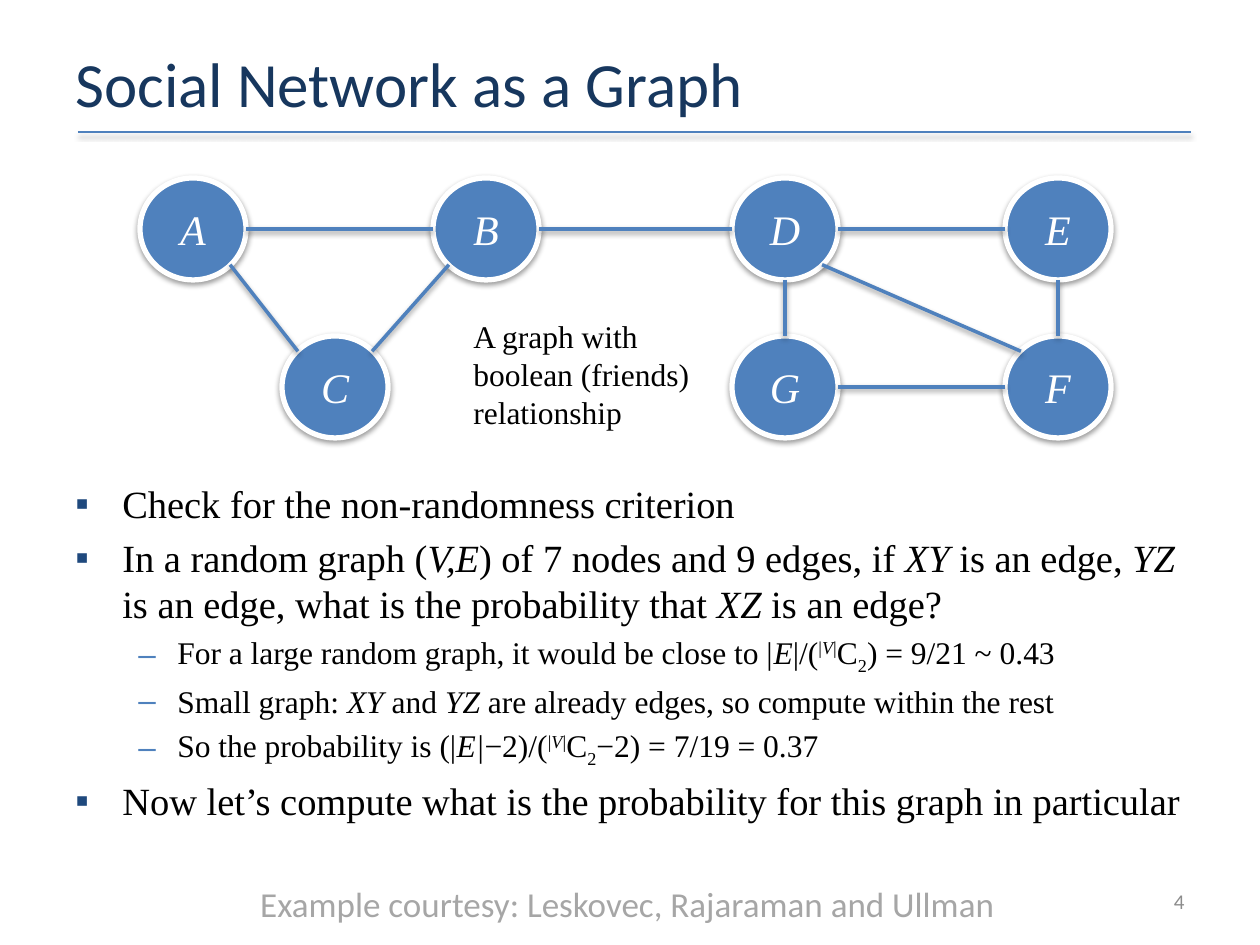
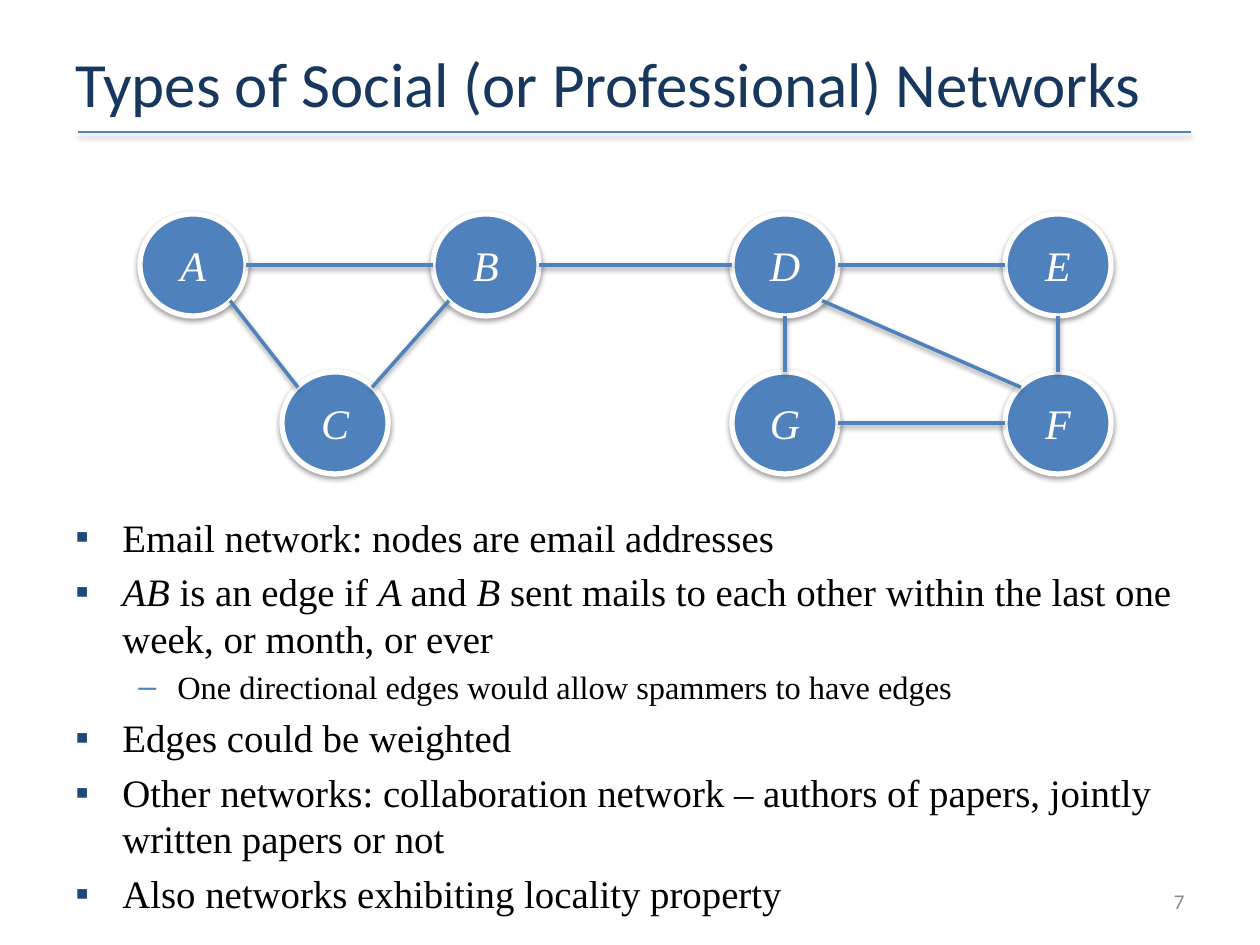
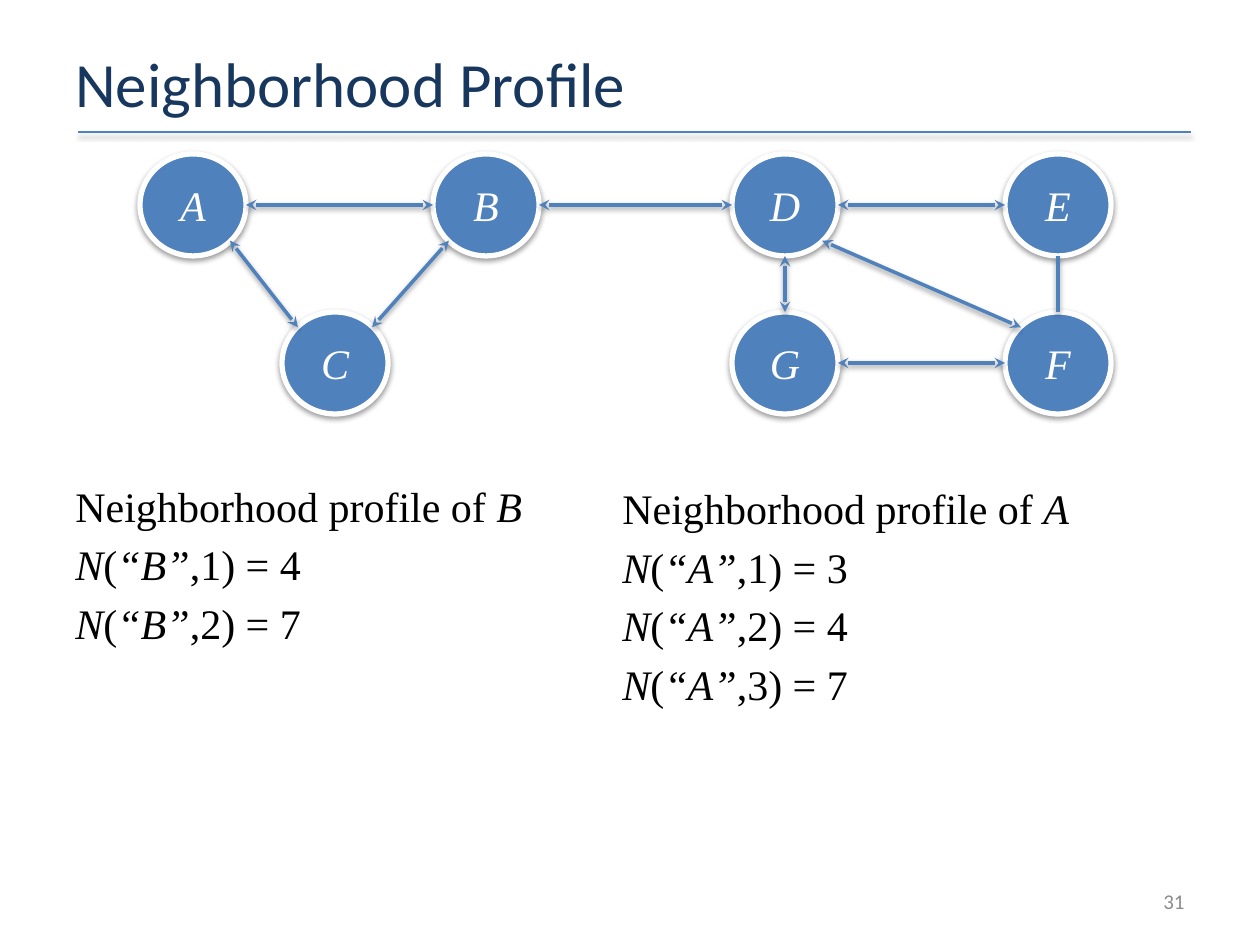
from lxml import etree
from pptx import Presentation
from pptx.dml.color import RGBColor
from pptx.enum.shapes import MSO_CONNECTOR, MSO_SHAPE
from pptx.enum.text import MSO_ANCHOR, PP_ALIGN
from pptx.oxml.ns import qn
from pptx.util import Pt

LINE, OVAL = MSO_CONNECTOR.STRAIGHT, MSO_SHAPE.OVAL
TOP, MID = MSO_ANCHOR.TOP, MSO_ANCHOR.MIDDLE
LEFT, MIDST, RIGHT = PP_ALIGN.LEFT, PP_ALIGN.CENTER, PP_ALIGN.RIGHT
SCALE = 914400 / 126
SERIF, SANS = "Times New Roman", "Calibri"
BLUE, NAVY, DEEP = "4F81BD", "17375E", "1F497D"
WHITE, BLACK, GREY, PALE = "FFFFFF", "000000", "8C8C8C", "A6A6A6"

BULLETS = [(47, 47, "▪", DEEP), (102, 39, "–", BLUE)]
WIDE, HIGH, DROP = 106, 102, 158
NODES = {
    "A": (140, 0), "B": (433, 0), "C": (282, 1), "D": (732, 0),
    "E": (1005, 0), "G": (732, 1), "F": (1005, 1),
}
NEAR, FAR = 0.15, 0.85
SITES = {
    "top": (0.5, 0), "base": (0.5, 1), "left": (0, 0.5), "right": (1, 0.5),
    "nw": (NEAR, NEAR), "ne": (FAR, NEAR), "sw": (NEAR, FAR), "se": (FAR, FAR),
}
EDGES = [
    ("A", "right", "B", "left"), ("A", "se", "C", "nw"),
    ("B", "sw", "C", "ne"), ("D", "left", "B", "right"),
    ("D", "base", "G", "top"), ("D", "right", "E", "left"),
    ("G", "right", "F", "left"), ("D", "se", "F", "nw"),
    ("E", "base", "F", "top"),
]
PLAIN = ("E", "F")


def px(num):
    return round(num * SCALE)


def hue(code):
    return RGBColor.from_string(code)


def add(root, tag, **attrs):
    return etree.SubElement(root, qn(tag), {k: str(v) for k, v in attrs.items()})


def shade(item):
    effect = add(item._element.spPr, "a:effectLst")
    drop = add(effect, "a:outerShdw", blurRad=40000, dist=20000,
               dir=5400000, rotWithShape=0)
    tint = add(drop, "a:srgbClr", val=BLACK)
    add(tint, "a:alpha", val=38000)


def split(line):
    parts, marks = [], {"*": False, "^": False, "_": False}
    chunk = ""
    for char in line + "*":
        if char in marks:
            if chunk:
                parts.append((chunk, dict(marks)))
            chunk = ""
            marks[char] = not marks[char]
        else:
            chunk += char
    return parts


def bullet(para, level):
    left, hang, sign, color = BULLETS[level]
    props = para._p.get_or_add_pPr()
    props.set("marL", str(px(left)))
    props.set("indent", str(-px(hang)))
    add(add(props, "a:buClr"), "a:srgbClr", val=color)
    add(props, "a:buFont", typeface="Arial")
    add(props, "a:buChar", char=sign)


def write(frame, lines, size=24, font=SERIF, color=BLACK, align=LEFT,
          anchor=TOP, gap=0, small=18):
    frame.word_wrap = True
    frame.vertical_anchor = anchor
    for num, line in enumerate(lines):
        level, words = line if isinstance(line, tuple) else (None, line)
        para = frame.paragraphs[0] if num == 0 else frame.add_paragraph()
        para.alignment = align
        if gap:
            space = add(para._p.get_or_add_pPr(), "a:spcBef")
            add(space, "a:spcPct", val=gap * 1000)
        if level is not None:
            bullet(para, level)
        for chunk, marks in split(words):
            run = para.add_run()
            run.text = chunk
            run.font.name = font
            run.font.size = Pt(small if level == 1 else size)
            run.font.color.rgb = hue(color)
            run.font.italic = marks["*"]
            if marks["^"] or marks["_"]:
                shift = 30000 if marks["^"] else -25000
                run._r.get_or_add_rPr().set("baseline", str(shift))


def text(slide, box, lines, **style):
    item = slide.shapes.add_textbox(*map(px, box))
    write(item.text_frame, lines, **style)


def link(slide, start, end, width=2, arrows=False):
    item = slide.shapes.add_connector(LINE, *map(px, start + end))
    item.line.color.rgb = hue(BLUE)
    item.line.width = Pt(width)
    if arrows:
        for tag in ("a:headEnd", "a:tailEnd"):
            add(item.line._get_or_add_ln(), tag, type="stealth")
    shade(item)


def site(name, side, top):
    left, row = NODES[name]
    across, down = SITES[side]
    return left + across * WIDE, top + row * DROP + down * HIGH


def node(slide, name, top):
    item = slide.shapes.add_shape(
        OVAL, *map(px, site(name, "left", top)[:1]),
        px(site(name, "top", top)[1]), px(WIDE), px(HIGH))
    item.fill.solid()
    item.fill.fore_color.rgb = hue(BLUE)
    item.line.color.rgb = hue(WHITE)
    item.line.width = Pt(3)
    shade(item)
    write(item.text_frame, [f"*{name}*"], color=WHITE, align=MIDST, anchor=MID)


def graph(slide, top, arrows=False):
    for name in NODES:
        node(slide, name, top)
    for one, out, two, into in EDGES:
        link(slide, site(one, out, top), site(two, into, top),
             arrows=arrows and (one, two) != PLAIN)


def page(deck, title, number):
    slide = deck.slides.add_slide(deck.slide_layouts[6])
    link(slide, (78, 132), (1191, 132), width=1)
    text(slide, (63, 38, 1134, 89), [title], size=36, font=SANS,
         color=NAVY, anchor=MID)
    text(slide, (903, 876, 294, 50), [str(number)], size=12, font=SANS,
         color=GREY, align=RIGHT, anchor=MID)
    return slide


def profile(slide, box, name, counts):
    lines = [f"Neighborhood profile of *{name}*"]
    lines += [f"*N*(*“{name}”*,{hop}) = {count}"
              for hop, count in enumerate(counts, 1)]
    text(slide, box, lines, gap=20)


def main():
    deck = Presentation()
    deck.slide_width, deck.slide_height = px(1260), px(945)

    slide = page(deck, "Social Network as a Graph", 4)
    text(slide, (63, 474, 1134, 403), [
        (0, "Check for the non-randomness criterion"),
        (0, "In a random graph (*V,E*) of 7 nodes and 9 edges, if *XY* is an "
            "edge, *YZ* is an edge, what is the probability that *XZ* is an edge?"),
        (1, "For a large random graph, it would be close to "
            "|*E*|/(^|*V*|^C_2_) = 9/21 ~ 0.43"),
        (1, "Small graph: *XY* and *YZ* are already edges, "
            "so compute within the rest"),
        (1, "So the probability is (|*E|*−2)/(^|*V*|^C_2_−2) = 7/19 = 0.37"),
        (0, "Now let’s compute what is the probability for this graph "
            "in particular"),
    ], size=22, gap=20)
    graph(slide, 178)
    text(slide, (461, 311, 261, 127),
         ["A graph with boolean (friends) relationship"], size=18)
    text(slide, (63, 876, 1129, 55),
         ["Example courtesy: Leskovec, Rajaraman and Ullman"],
         size=20, font=SANS, color=PALE, align=MIDST)

    slide = page(deck, "Types of Social (or Professional) Networks", 7)
    text(slide, (63, 507, 1134, 369), [
        (0, "Email network: nodes are email addresses"),
        (0, "*AB *is an edge if *A *and *B *sent mails to each other within "
            "the last one week, or month, or ever"),
        (1, "One directional edges would allow spammers to have edges"),
        (0, "Edges could be weighted"),
        (0, "Other networks: collaboration network – authors of papers, "
            "jointly written papers or not"),
        (0, "Also networks exhibiting locality property"),
    ], size=22.2, small=18.5, gap=20)
    graph(slide, 214)

    slide = page(deck, "Neighborhood Profile", 31)
    profile(slide, (63, 474, 585, 217), "B", [4, 7])
    graph(slide, 154, arrows=True)
    profile(slide, (610, 476, 585, 260), "A", [3, 4, 7])

    deck.save("out.pptx")


if __name__ == "__main__":
    main()
